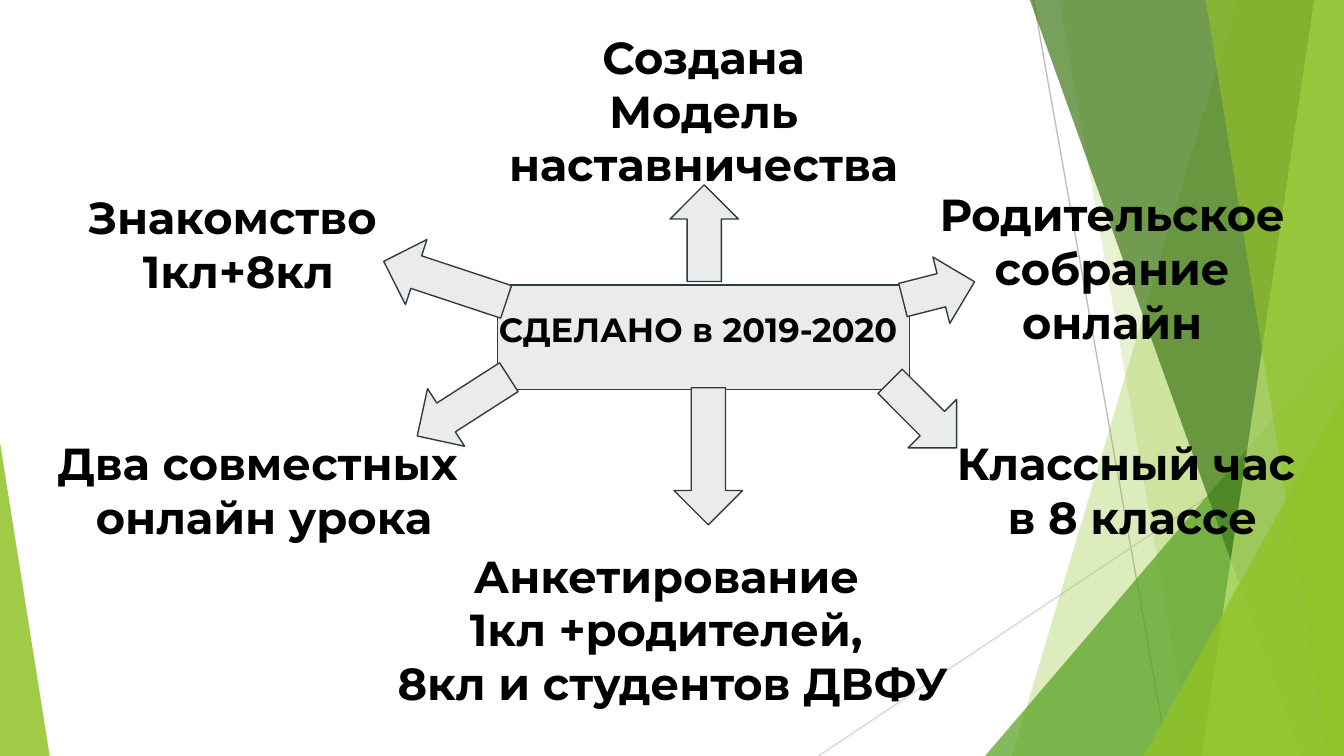
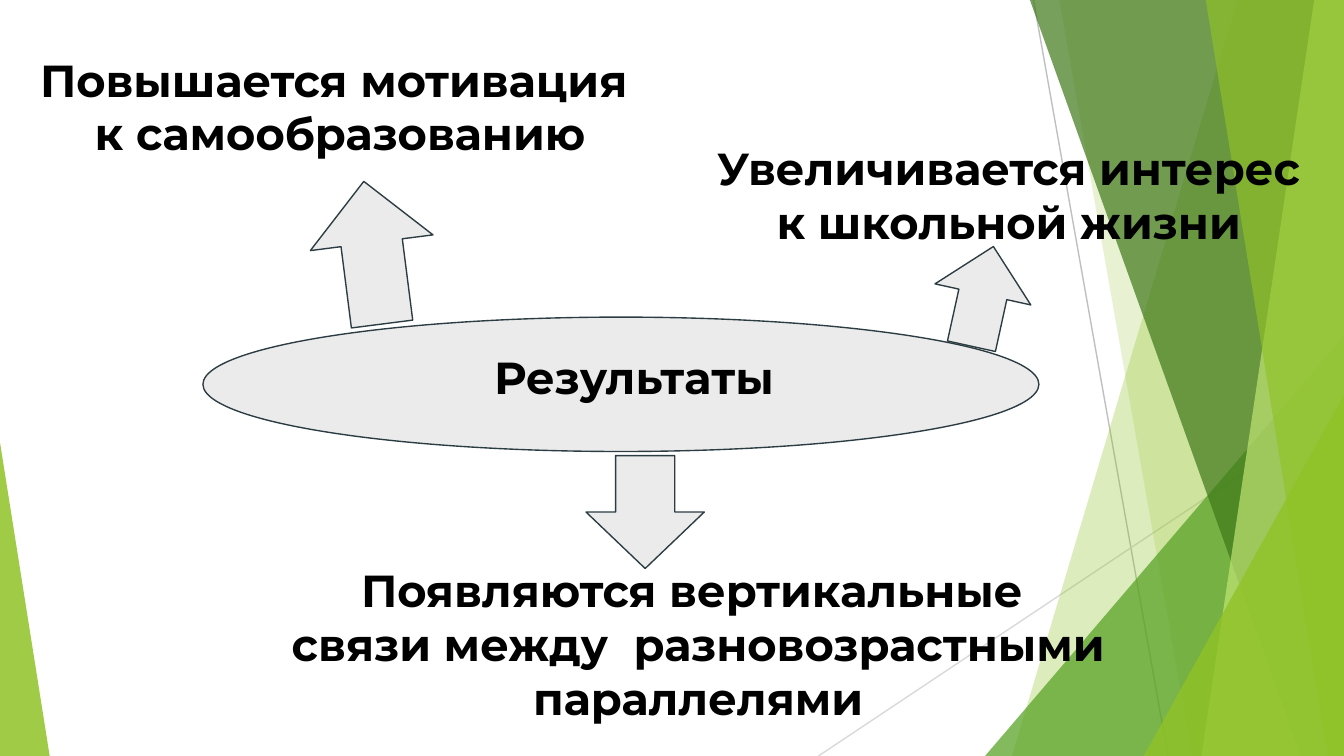
"""Builds two mentoring slides: work done in 2019-2020 and its results."""
import pptx
import pptx.util
import pptx.dml.color
import pptx.enum.shapes
import pptx.enum.text
import pptx.oxml.ns
from lxml import etree

Inches = pptx.util.Inches
Pt = pptx.util.Pt
RGB = pptx.dml.color.RGBColor.from_string
MSO = pptx.enum.shapes.MSO_SHAPE
qn = pptx.oxml.ns.qn

W = 10
H = W * 9 / 16
THEME = {
    "panel": "EBEBEB", "outline": "2C3C43", "line_width": 0.75,
    "lime": "90C226", "leaf": "54A021", "forest": "3F7819", "pale": "C0E474",
    "font": {"name": "Montserrat", "bold": True},
    "ink": "000000", "title_size": 18, "text_size": 24, "indent": 0.5,
}
FRAME = {
    "word_wrap": True,
    "auto_size": pptx.enum.text.MSO_AUTO_SIZE.NONE,
    "vertical_anchor": pptx.enum.text.MSO_ANCHOR.TOP,
    "margin_left": Inches(0.1), "margin_right": Inches(0.1),
    "margin_top": Inches(0.1), "margin_bottom": Inches(0.1),
}


def style_shape(sp, color, alpha=None):
    sp.shadow.inherit = False
    sp.fill.solid()
    sp.fill.fore_color.rgb = RGB(color)
    if alpha is None:
        sp.line.color.rgb = RGB(THEME["outline"])
        sp.line.width = Pt(THEME["line_width"])
    else:
        sp.line.fill.background()
        clr = sp._element.spPr.find(qn("a:solidFill"))[0]
        etree.SubElement(clr, qn("a:alpha")).set("val", str(alpha * 1000))


def write_text(sp, lines, size, indent=0):
    tf = sp.text_frame
    for name, value in FRAME.items():
        setattr(tf, name, value)
    for i, line in enumerate(lines):
        p = tf.add_paragraph() if i else tf.paragraphs[0]
        p.alignment = pptx.enum.text.PP_ALIGN.CENTER
        pPr = p._p.get_or_add_pPr()
        pPr.set("marL", str(Inches(indent)))
        pPr.set("indent", "0")
        r = p.add_run()
        r.text = line
        for name, value in THEME["font"].items():
            setattr(r.font, name, value)
        r.font.size = Pt(size)
        r.font.color.rgb = RGB(THEME["ink"])


IND = THEME["indent"]
SLIDES = [
    {
        "panel": (MSO.RECTANGLE, 3.7, 2.12, 3.07, 0.78),
        "title": ("СДЕЛАНО в 2019-2020", THEME["title_size"], 0, 3.52, 2.2, 3.35, 0.59),
        "texts": [
            (["Создана", "Модель наставничества"], 0, 3.55, 0.12, 3.37, 0.95),
            (["Знакомство ", "1кл+8кл"], 0, 0.51, 1.31, 2.53, 0.95),
            (["Два совместных ", "онлайн урока"], 0, 0.31, 3.14, 3.31, 0.71),
            (["Родительское собрание", "онлайн"], 0, 6.78, 1.29, 2.99, 0.71),
            (["Классный час ", "в 8 классе"], 0, 6.93, 3.14, 2.99, 0.71),
            (["Анкетирование ", "1кл +родителей, ", "8кл и студентов ДВФУ"],
             0, 2.7, 3.98, 4.61, 0.71),
        ],
        "arrows": [
            (345.7, 6.71, 1.91, 0.55, 0.51),
            (90, 4.76, 3.14, 1.02, 0.51),
            (147.3, 3.04, 2.77, 0.81, 0.51),
            (198.3, 2.83, 1.84, 0.96, 0.51),
            (45, 6.52, 2.83, 0.7, 0.51),
            (270, 4.88, 1.48, 0.72, 0.51),
        ],
    },
    {
        "panel": (MSO.OVAL, 1.51, 2.36, 6.22, 1),
        "title": ("Результаты ", THEME["text_size"], IND, 1.41, 2.5, 6.21, 0.73),
        "texts": [
            (["Повышается мотивация ", "к самообразованию"], 0, 0, 0.29, 5.06, 1),
            (["Появляются вертикальные ", "связи между  разновозрастными параллелями"],
             IND, 1.41, 4.09, 7.07, 1.37),
            (["Увеличивается интерес к школьной жизни"], IND, 4.64, 0.95, 5.23, 1.1),
        ],
        "arrows": [
            (262.7, 2.24, 1.42, 1.07, 0.92),
            (282.4, 6.93, 1.84, 0.76, 0.73),
            (90, 4.38, 3.37, 0.84, 0.88),
        ],
    },
]

RAYS = [((7.69, 0), (8.69, H), "BFBFBF"), ((W, 3.02), (6.09, H), "D9D9D9")]
FACETS = [
    ("band", (9.21, 7.53), "lime", 30),
    ("band", (7.88, 8.87), "lime", 20),
    ("triangle", (7.33, 2.5, 1), "leaf", 72),
    ("band", (7.66, 9.68), "forest", 70),
    ("band", (9.78, 8.94), "pale", 70),
    ("band", (8.97, 9.88), "lime", 65),
    ("triangle", (8.51, 2.94, 1), "lime", 80),
    ("triangle", (0, 3.29, 0), "lime", 85),
]

prs = pptx.Presentation()
prs.slide_width, prs.slide_height = Inches(W), Inches(H)
layout = prs.slide_layouts[5]
for ph in list(layout.placeholders)[1:]:
    ph._element.getparent().remove(ph._element)
slides = [prs.slides.add_slide(layout) for _ in SLIDES]

decor = []
shapes = slides[0].shapes
for start, end, color in RAYS:
    sp = shapes.add_connector(pptx.enum.shapes.MSO_CONNECTOR.STRAIGHT,
                              *map(Inches, start + end))
    sp.line.color.rgb = RGB(color)
    sp.line.width = Pt(THEME["line_width"])
    etree.SubElement(sp._element.spPr, qn("a:effectLst"))
    decor.append(sp)
for kind, geometry, color, alpha in FACETS:
    if kind == "band":
        top, bottom = geometry
        corners = [(W, -0.01), (W, H), (bottom, H)]
        fb = shapes.build_freeform(Inches(top), Inches(-0.01))
        fb.add_line_segments([tuple(map(Inches, xy)) for xy in corners], close=True)
        sp = fb.convert_to_shape()
    else:
        left, top, apex = geometry
        width = W - left if apex else 0.37
        sp = shapes.add_shape(MSO.ISOSCELES_TRIANGLE,
                              *map(Inches, (left, top, width, H - top)))
        sp.adjustments[0] = apex
    style_shape(sp, THEME[color], alpha)
    decor.append(sp)
for sp in decor:
    layout.shapes._spTree.append(sp._element)

for s, content in zip(slides, SLIDES):
    kind, *box = content["panel"]
    sp = s.shapes.add_shape(kind, *map(Inches, box))
    style_shape(sp, THEME["panel"])

    text, size, indent, *box = content["title"]
    title = s.shapes.title
    title.left, title.top, title.width, title.height = map(Inches, box)
    write_text(title, [text], size, indent)
    s.shapes._spTree.append(title._element)

    for lines, indent, *box in content["texts"]:
        sp = s.shapes.add_textbox(*map(Inches, box))
        write_text(sp, lines, THEME["text_size"], indent)

    for angle, *box in content["arrows"]:
        sp = s.shapes.add_shape(MSO.RIGHT_ARROW, *map(Inches, box))
        sp.rotation = angle
        style_shape(sp, THEME["panel"])

prs.save("out.pptx")
